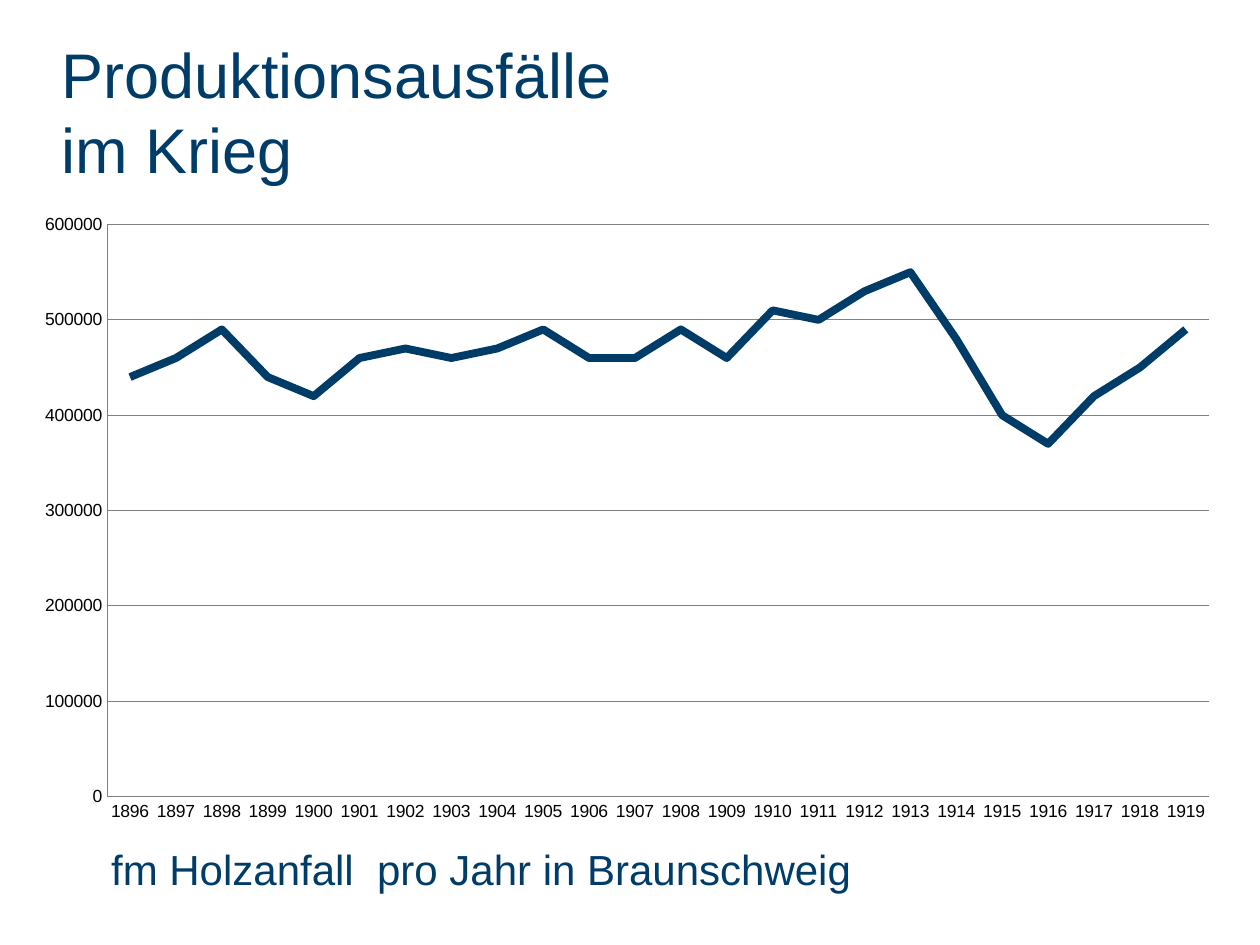
from dataclasses import dataclass

from lxml.etree import SubElement
from pptx import Presentation
from pptx.chart.data import CategoryChartData
from pptx.dml.color import RGBColor
from pptx.enum.chart import XL_CHART_TYPE, XL_TICK_MARK
from pptx.enum.text import MSO_ANCHOR
from pptx.oxml.ns import qn
from pptx.util import Inches, Pt


@dataclass(frozen=True)
class Theme:
    """Colours, typeface and sizes of the slide."""

    font: str = "Arial"
    navy: RGBColor = RGBColor(0x00, 0x3C, 0x68)
    black: RGBColor = RGBColor(0, 0, 0)
    grey: RGBColor = RGBColor(0x80, 0x80, 0x80)
    heading: Pt = Pt(36)
    caption: Pt = Pt(24)
    label: Pt = Pt(10)
    curve: Pt = Pt(4.5)
    hairline: Pt = Pt(0.5)


THEME = Theme()
WIDTH, HEIGHT = Inches(10), Inches(7.5)
FIRST_YEAR = 1896
HARVEST_TEN_THOUSANDS = (
    44, 46, 49, 44, 42, 46, 47, 46, 47, 49, 46, 46,
    49, 46, 51, 50, 53, 55, 48, 40, 37, 42, 45, 49,
)


def area(left, top, width, height):
    """Turn percentages of the slide into a position and size."""
    shares = (left, top, width, height)
    return [round(side * share / 100) for side, share in zip((WIDTH, HEIGHT) * 2, shares)]


def add_text(slide, place, wording, size):
    """Add a wrapped navy text box."""
    frame = slide.shapes.add_textbox(*place).text_frame
    frame.word_wrap = True
    frame.vertical_anchor = MSO_ANCHOR.TOP
    frame.text = wording
    font = frame.paragraphs[0].runs[0].font
    font.name, font.size = THEME.font, size
    font.color.rgb = THEME.navy


def style_line(line, color, width):
    """Give a chart line its colour and width."""
    line.color.rgb = color
    line.width = width


def set_plot_layout(chart, **shares):
    """Fix the inner plot area as shares of the chart."""
    plot_area = chart._chartSpace.chart.plotArea
    layout = plot_area.find(qn("c:layout"))
    if layout is None:
        layout = SubElement(plot_area, qn("c:layout"))
        plot_area.insert(0, layout)
    manual = SubElement(layout, qn("c:manualLayout"))
    settings = {"layoutTarget": "inner", "xMode": "edge", "yMode": "edge", **shares}
    for tag, setting in settings.items():
        SubElement(manual, qn(f"c:{tag}")).set("val", str(setting))


def add_harvest_chart(slide, place):
    """Add the line chart of yearly timber harvest."""
    harvest = CategoryChartData()
    harvest.categories = [str(FIRST_YEAR + n) for n in range(len(HARVEST_TEN_THOUSANDS))]
    harvest.add_series("Series 1", [amount * 10000 for amount in HARVEST_TEN_THOUSANDS])
    chart = slide.shapes.add_chart(XL_CHART_TYPE.LINE_STACKED, *place, harvest).chart
    chart.has_legend = chart.has_title = False
    chart.font.name, chart.font.size = THEME.font, THEME.label
    chart.font.color.rgb = THEME.black
    set_plot_layout(chart, x=0.087, y=0.042, w=0.895, h=0.855)

    years, amounts = chart.category_axis, chart.value_axis
    for axis in (years, amounts):
        axis.major_tick_mark = axis.minor_tick_mark = XL_TICK_MARK.NONE
        style_line(axis.format.line, THEME.grey, THEME.hairline)
    years.has_major_gridlines = False
    amounts.has_major_gridlines = True
    style_line(amounts.major_gridlines.format.line, THEME.grey, THEME.hairline)
    amounts.minimum_scale, amounts.maximum_scale = 0, 600000
    amounts.major_unit = 100000
    amounts.tick_labels.number_format = "0"
    amounts.tick_labels.number_format_is_linked = False

    chart.plots[0].vary_by_categories = False
    curve = chart.plots[0].series[0]
    curve.smooth = False
    style_line(curve.format.line, THEME.navy, THEME.curve)


def main():
    """Build and save the slide."""
    deck = Presentation()
    deck.slide_width, deck.slide_height = WIDTH, HEIGHT
    slide = deck.slides.add_slide(deck.slide_layouts[6])
    add_text(slide, area(7.84, 88.6, 75, 11.4), "fm Holzanfall  pro Jahr in Braunschweig",
             THEME.caption)
    add_harvest_chart(slide, area(0, 20.8, 97.7, 70.8))
    add_text(slide, area(3.9, 3.07, 50.8, 18.8), "Produktionsausfälle im Krieg",
             THEME.heading)
    deck.save("out.pptx")


if __name__ == "__main__":
    main()
